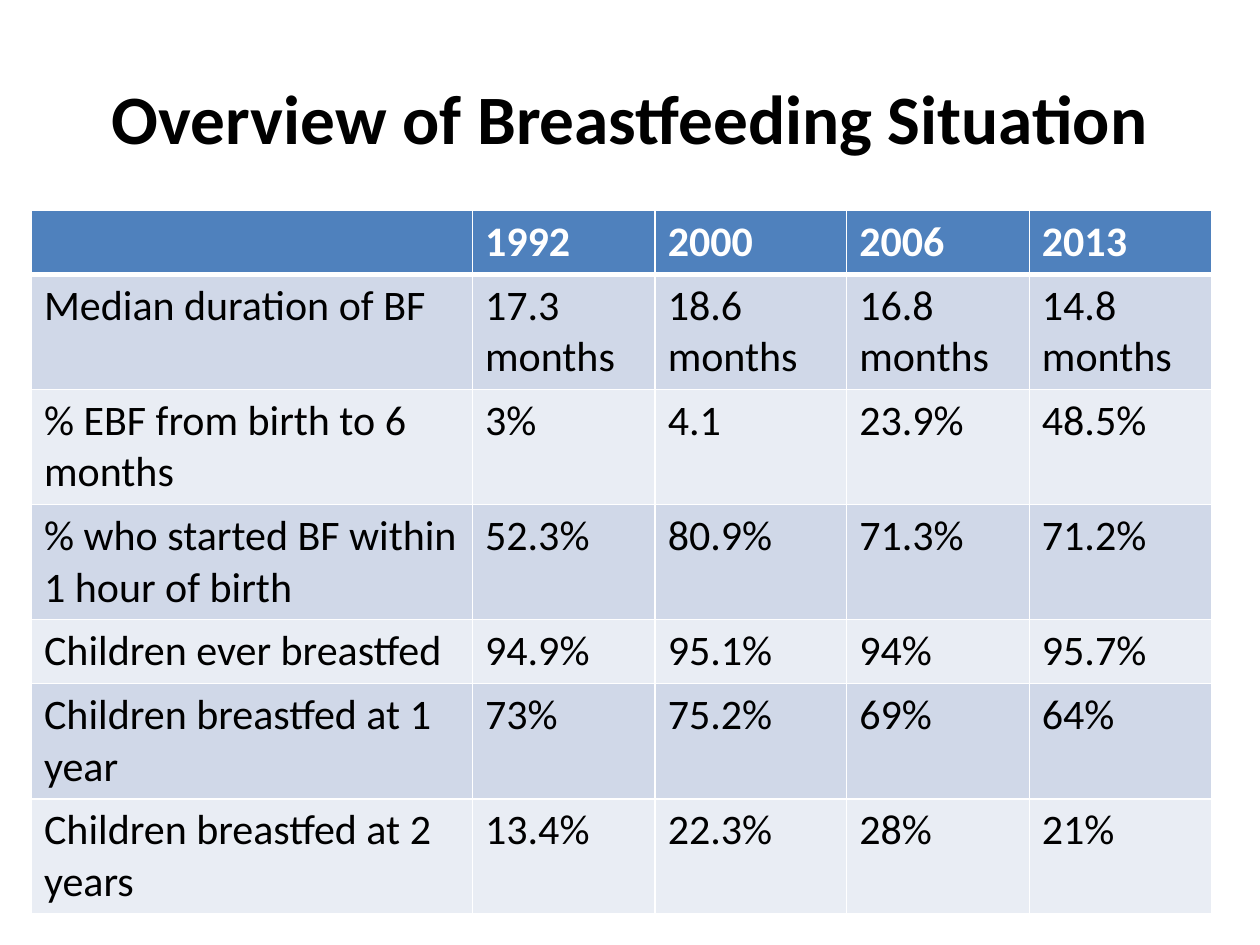
from dataclasses import dataclass

from lxml import etree
from pptx import Presentation
from pptx import util as u
from pptx.dml.color import RGBColor
from pptx.enum import text
from pptx.oxml import ns


@dataclass(frozen=True)
class Theme:
    font: str = "Calibri"
    title_size: float = 39.6
    table_size: float = 24
    ink: str = "000000"
    white: str = "FFFFFF"
    header: str = "4F81BD"
    bands: tuple = ("D0D8E8", "E9EDF4")
    rule: float = 1
    header_rule: float = 3


class SlideBuilder:
    def __init__(self, slide, theme):
        self.slide = slide
        self.theme = theme

    def format_text(self, text_frame, size, color, bold):
        for paragraph in text_frame.paragraphs:
            for run in paragraph.runs:
                run.font.name = self.theme.font
                run.font.size = u.Pt(size)
                run.font.bold = bold
                run.font.color.rgb = RGBColor.from_string(color)

    def title(self, wording, left, top, width, height):
        shape = self.slide.shapes.title
        shape.left, shape.top = u.Inches(left), u.Inches(top)
        shape.width, shape.height = u.Inches(width), u.Inches(height)
        frame = shape.text_frame
        frame.text = wording
        frame.auto_size = text.MSO_AUTO_SIZE.NONE
        frame.vertical_anchor = text.MSO_ANCHOR.MIDDLE
        frame.paragraphs[0].alignment = text.PP_ALIGN.CENTER
        self.format_text(frame, self.theme.title_size, self.theme.ink, True)

    def borders(self, cell, top, bottom):
        properties = cell._tc.get_or_add_tcPr()
        sides = {"L": self.theme.rule, "R": self.theme.rule, "T": top, "B": bottom}
        for index, (side, width) in enumerate(sides.items()):
            line = etree.Element(ns.qn(f"a:ln{side}"), w=str(u.Pt(width)))
            fill = etree.SubElement(line, ns.qn("a:solidFill"))
            etree.SubElement(fill, ns.qn("a:srgbClr"), val=self.theme.white)
            properties.insert(index, line)

    def table(self, rows, left, top, column_widths, row_heights):
        theme = self.theme
        table = self.slide.shapes.add_table(
            len(rows), len(column_widths), u.Inches(left), u.Inches(top),
            u.Inches(sum(column_widths)), u.Inches(sum(row_heights)),
        ).table
        for column, width in zip(table.columns, column_widths):
            column.width = u.Inches(width)
        for row_index, (values, height) in enumerate(zip(rows, row_heights)):
            table.rows[row_index].height = u.Inches(height)
            is_header = row_index == 0
            fill = theme.header if is_header else theme.bands[(row_index - 1) % 2]
            color = theme.white if is_header else theme.ink
            above = theme.header_rule if row_index == 1 else theme.rule
            below = theme.header_rule if is_header else theme.rule
            for column_index, value in enumerate(values):
                cell = table.cell(row_index, column_index)
                cell.text_frame.text = value
                cell.fill.solid()
                cell.fill.fore_color.rgb = RGBColor.from_string(fill)
                self.format_text(cell.text_frame, theme.table_size, color, is_header)
                self.borders(cell, above, below)


ROWS = [
    ("", "1992", "2000", "2006", "2013"),
    ("Median duration of BF", "17.3\nmonths", "18.6\nmonths", "16.8\nmonths", "14.8 months"),
    ("% EBF from birth to 6 months", "3%", "4.1", "23.9%", "48.5%"),
    ("% who started BF within 1 hour of birth", "52.3%", "80.9%", "71.3%", "71.2%"),
    ("Children ever breastfed", "94.9%", "95.1%", "94%", "95.7%"),
    ("Children breastfed at 1 year", "73%", "75.2%", "69%", "64%"),
    ("Children breastfed at 2 years", "13.4%", "22.3%", "28%", "21%"),
]
COLUMN_WIDTHS = [3.5, 1.45, 1.52, 1.45, 1.45]
ONE_LINE, TWO_LINES = 0.5, 0.91
ROW_HEIGHTS = [ONE_LINE, *[TWO_LINES] * 3, ONE_LINE, *[TWO_LINES] * 2]


def main():
    presentation = Presentation()
    presentation.slide_width = u.Inches(10)
    presentation.slide_height = u.Inches(7.5)
    title_only = presentation.slide_layouts[5]
    builder = SlideBuilder(presentation.slides.add_slide(title_only), Theme())
    builder.title("Overview of Breastfeeding Situation", 0.5, 0.3, 9, 1.25)
    builder.table(ROWS, 0.25, 1.67, COLUMN_WIDTHS, ROW_HEIGHTS)
    presentation.save("out.pptx")


if __name__ == "__main__":
    main()
